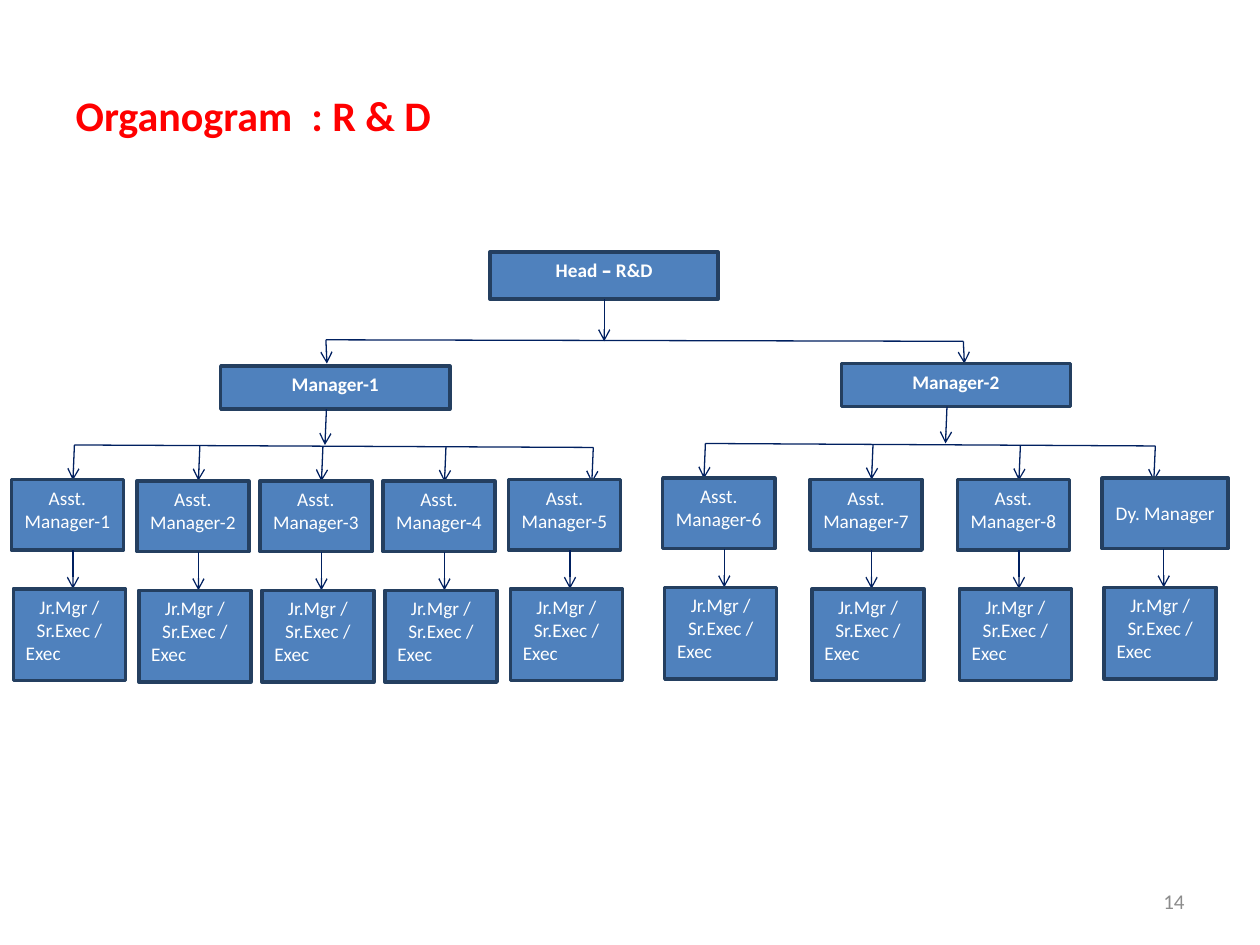
"""Build the R&D organogram slide."""
from lxml.etree import SubElement
from pptx import Presentation
from pptx.dml.color import RGBColor
from pptx.enum.shapes import MSO_CONNECTOR as Connector, MSO_SHAPE as Shape
from pptx.enum.text import MSO_ANCHOR as Anchor, PP_ALIGN as Align
from pptx.oxml.ns import qn
from pptx.util import Cm, Pt

COLORS = {
    "title": "FF0000",
    "number": "8C8C8C",
    "card": "4F81BD",
    "border": "243F60",
    "line": "002060",
    "text": "FFFFFF",
}
CARD_W, CARD_H, STAFF_H = 2.26, 1.42, 1.85
STAFF_DX, STAFF_DY = 0.04, 2.2
DROP_DX, DROP_H = -0.03, 0.71
STEM_DX = 1.24


def color(name):
    """Return the named colour."""
    return RGBColor.from_string(COLORS[name])


def style(paragraph, size, fill, bold=False, align=Align.CENTER):
    """Align a paragraph and format its runs."""
    paragraph.alignment = align
    for run in paragraph.runs:
        run.font.name = "Calibri"
        run.font.size = Pt(size)
        run.font.bold = bold
        run.font.color.rgb = color(fill)


def add_line(slide, start, end, arrow=False):
    """Draw a thin line, with an open arrowhead at its end if asked."""
    link = slide.shapes.add_connector(Connector.STRAIGHT, *map(Cm, start + end))
    link.line.color.rgb = color("line")
    link.line.width = Pt(0.75)
    if arrow:
        SubElement(link.line._get_or_add_ln(), qn("a:tailEnd"), type="arrow")
    SubElement(link._element.spPr, qn("a:effectLst"))


def add_card(slide, box, text, bold=False):
    """Draw a bordered card with centred text and return its text frame."""
    card = slide.shapes.add_shape(Shape.RECTANGLE, *map(Cm, box))
    card.shadow.inherit = False
    card.fill.solid()
    card.fill.fore_color.rgb = color("card")
    card.line.color.rgb = color("border")
    card.line.width = Pt(2)
    frame = card.text_frame
    frame.word_wrap = True
    frame.vertical_anchor = Anchor.TOP
    frame.text = text
    for paragraph in frame.paragraphs:
        style(paragraph, 11, "text", bold)
    return frame


def add_title(slide, box):
    """Place and format the slide title."""
    title = slide.shapes.title
    title.left, title.top, title.width, title.height = map(Cm, box)
    title.text_frame.text = "Organogram  : R & D"
    title.text_frame.vertical_anchor = Anchor.TOP
    style(title.text_frame.paragraphs[0], 24, "title", True, Align.LEFT)


def add_number(slide, box):
    """Write the page number."""
    frame = slide.shapes.add_textbox(*map(Cm, box)).text_frame
    frame.word_wrap = True
    frame.vertical_anchor = Anchor.MIDDLE
    frame.text = "14"
    style(frame.paragraphs[0], 12, "number", align=Align.RIGHT)


def add_head(slide, box):
    """Draw the head of department with the branches to both managers."""
    left, top, width, height = box
    heading = add_card(slide, box, "Head ").paragraphs[0]
    for part in ("–", " R&D"):
        heading.add_run().text = part
    style(heading, 11, "text", True)
    heading.runs[1].font.name = "DejaVu Sans"
    middle, bar_y = left + width / 2, top + 1.77
    add_line(slide, (middle, top + height), (middle, bar_y + 0.03), True)
    ends = [(left - 3.31, bar_y), (left + 9.54, bar_y + 0.03)]
    add_line(slide, *ends)
    for x, y in ends:
        add_line(slide, (x, y), (x + 0.02, top + 2.25), True)


def add_column(slide, box, post, drop):
    """Draw one post, the arrow into it and the staff card below."""
    left, top, width, height = box
    add_line(slide, drop, (drop[0] + DROP_DX, drop[1] + DROP_H), True)
    frame = add_card(slide, box, post)
    if post == "Dy. Manager":
        frame.margin_top = Cm(0.47)
    stem_x, staff_y = left + STEM_DX, top + STAFF_DY
    add_line(slide, (stem_x, top + height), (stem_x, staff_y), True)
    staff_box = (left + STAFF_DX, staff_y, CARD_W, STAFF_H)
    staff = add_card(slide, staff_box, "Jr.Mgr / Sr.Exec /\nExec")
    staff.paragraphs[1].alignment = Align.LEFT


def add_team(slide, box, manager, bar, posts):
    """Draw a manager, the bar below and a column for each post."""
    left, top, width, height = box
    (x1, y1), (x2, y2) = bar
    slope = (y2 - y1) / (x2 - x1)
    stem_x = left + width / 2 - 0.18
    add_card(slide, box, manager, True)
    add_line(slide, (stem_x, top + height), (stem_x - 0.03, y1), True)
    add_line(slide, *bar)
    for post, post_left, post_top, post_width, drop_dx in posts:
        drop_x = post_left + drop_dx
        drop = (drop_x, y1 + slope * (drop_x - x1))
        add_column(slide, (post_left, post_top, post_width, CARD_H), post, drop)


def main():
    """Compose and save the slide."""
    deck = Presentation()
    deck.slide_width, deck.slide_height = Cm(25.4), Cm(19.05)
    slide = deck.slides.add_slide(deck.slide_layouts[5])
    add_title(slide, (1.27, 1.68, 8.05, 1.27))
    add_number(slide, (18.21, 17.65, 5.92, 1.02))
    add_head(slide, (9.88, 5.08, 4.6, 0.95))
    add_team(slide, (4.45, 7.38, 4.62, 0.87), "Manager-1",
             ((1.5, 8.97), (11.96, 9.02)), [
                 ("Asst. Manager-1", 0.23, 9.67, CARD_W, 1.27),
                 ("Asst. Manager-2", 2.76, 9.7, CARD_W, 1.27),
                 ("Asst. Manager-3", 5.24, 9.7, CARD_W, 1.27),
                 ("Asst. Manager-4", 7.72, 9.7, CARD_W, 1.27),
                 ("Asst. Manager-5", 10.25, 9.67, CARD_W, 1.71)])
    add_team(slide, (16.96, 7.33, 4.62, 0.87), "Manager-2",
             ((14.22, 8.94), (23.29, 8.99)), [
                 ("Asst. Manager-6", 13.36, 9.64, CARD_W, 0.86),
                 ("Asst. Manager-7", 16.33, 9.67, CARD_W, 1.27),
                 ("Asst. Manager-8", 19.3, 9.67, CARD_W, 1.27),
                 ("Dy. Manager", 22.22, 9.64, 2.54, 1.07)])
    deck.save("out.pptx")


if __name__ == "__main__":
    main()
